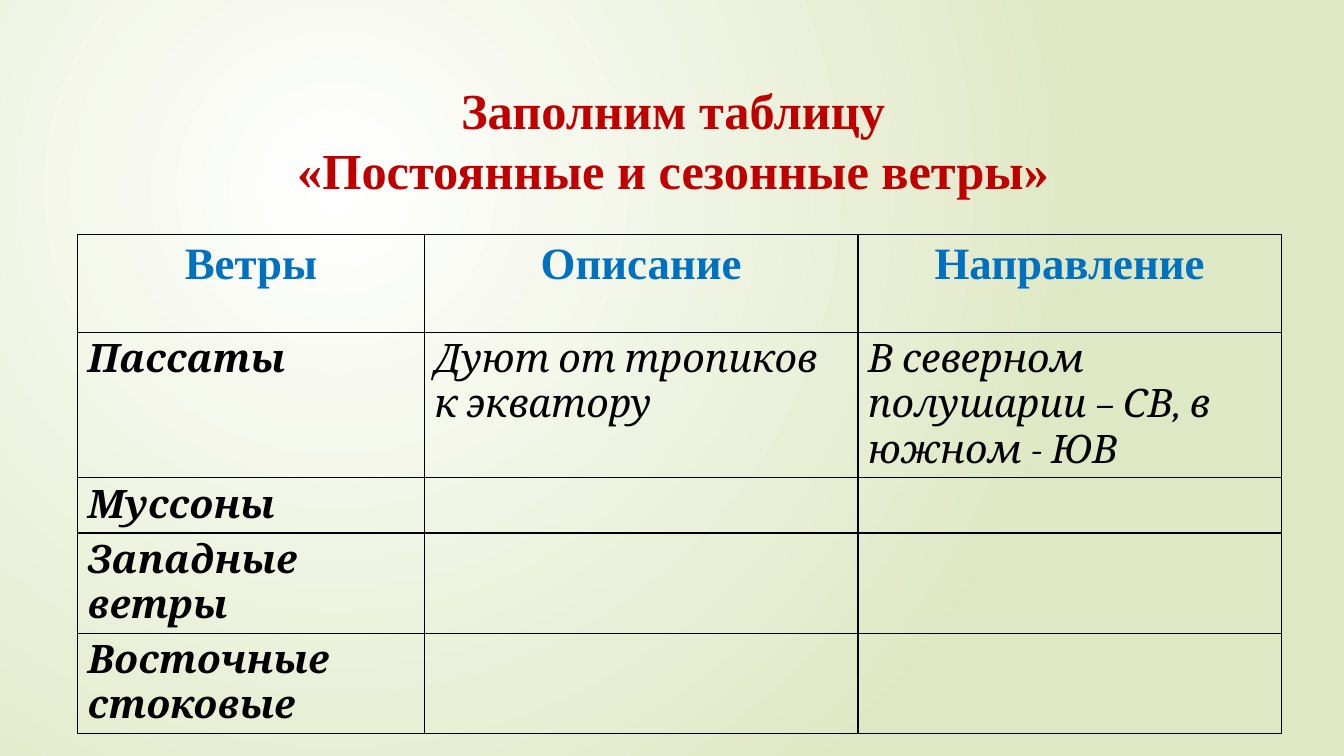
from dataclasses import dataclass

from lxml.etree import SubElement
from pptx import Presentation
from pptx.dml.color import RGBColor
from pptx.enum.text import MSO_ANCHOR, MSO_AUTO_SIZE, PP_ALIGN
from pptx.oxml.ns import qn
from pptx.slide import Slide
from pptx.table import _Cell as Cell
from pptx.text.text import _Paragraph as Paragraph
from pptx.util import Inches, Pt


@dataclass(frozen=True)
class TextStyle:
    font: str
    size: int
    color: str
    bold: bool = False
    italic: bool = False
    align: PP_ALIGN = PP_ALIGN.LEFT


@dataclass(frozen=True)
class Theme:
    title: TextStyle = TextStyle("Times New Roman", 36, "C00000", bold=True, align=PP_ALIGN.CENTER)
    header: TextStyle = TextStyle("Times New Roman", 32, "0070C0", bold=True, align=PP_ALIGN.CENTER)
    wind: TextStyle = TextStyle("Cambria", 28, "000000", bold=True, italic=True)
    detail: TextStyle = TextStyle("Cambria", 28, "000000", italic=True)
    glow: str = "FFFFFF"
    backdrop: str = "DFE8C4"
    border: str = "000000"
    border_width: int = 1


@dataclass(frozen=True)
class WindRow:
    wind: str
    description: str = ""
    direction: str = ""


THEME = Theme()
TITLE_LINES = ("Заполним таблицу ", "«Постоянные и сезонные ветры» ")
HEADER = WindRow("Ветры", "Описание", "Направление")
WINDS = (
    WindRow("Пассаты", "Дуют от тропиков к экватору", "В северном полушарии – СВ, в южном - ЮВ"),
    WindRow("Муссоны"),
    WindRow("Западные ветры"),
    WindRow("Восточные стоковые"),
)
COLUMN_WIDTHS = (3.44, 4.3, 4.2)
HEADER_HEIGHT, ROW_HEIGHT = 0.97, 0.41


def add_run(paragraph: Paragraph, text: str, style: TextStyle) -> None:
    """Append a styled run and align its paragraph."""
    paragraph.alignment = style.align
    run = paragraph.add_run()
    run.text = text
    font = run.font
    font.name, font.size = style.font, Pt(style.size)
    font.bold, font.italic = style.bold, style.italic
    font.color.rgb = RGBColor.from_string(style.color)


def paint_background(slide: Slide) -> None:
    """Fill the background with a circular gradient."""
    fill = slide.background.fill
    fill.gradient()
    for stop, color in zip(fill.gradient_stops, (THEME.glow, THEME.backdrop)):
        stop.color.rgb = RGBColor.from_string(color)
    gradient = slide.element.find(".//" + qn("a:gradFill"))
    gradient.remove(gradient.find(qn("a:lin")))
    circle = SubElement(gradient, qn("a:path"), {"path": "circle"})
    SubElement(circle, qn("a:fillToRect"), {"l": "50000", "t": "50000", "r": "100000", "b": "100000"})


def write_title(slide: Slide) -> None:
    """Place the two-line title."""
    title = slide.shapes.title
    title.left, title.top = Inches(0.89), Inches(0.68)
    title.width, title.height = Inches(11.7), Inches(0.8)
    frame = title.text_frame
    frame.word_wrap, frame.auto_size = True, MSO_AUTO_SIZE.NONE
    frame.vertical_anchor, frame.margin_top = MSO_ANCHOR.TOP, Inches(0.1)
    paragraph = frame.paragraphs[0]
    for index, line in enumerate(TITLE_LINES):
        if index:
            paragraph.add_line_break()
        add_run(paragraph, line, THEME.title)


def format_cell(cell: Cell, text: str, style: TextStyle) -> None:
    """Give a cell its borders, clear fill and text."""
    properties = cell._tc.get_or_add_tcPr()
    for side in ("a:lnL", "a:lnR", "a:lnT", "a:lnB"):
        line = SubElement(properties, qn(side), {"w": str(Pt(THEME.border_width))})
        solid = SubElement(line, qn("a:solidFill"))
        SubElement(solid, qn("a:srgbClr"), {"val": THEME.border})
    cell.fill.background()
    if text:
        add_run(cell.text_frame.paragraphs[0], text, style)


def add_wind_table(slide: Slide) -> None:
    """Draw the table of winds."""
    rows = (HEADER, *WINDS)
    frame = slide.shapes.add_table(
        len(rows), len(COLUMN_WIDTHS), Inches(0.77), Inches(2.33), Inches(11.93), Inches(4.17)
    )
    table = frame.table
    table.first_row = table.horz_banding = False
    for column, width in zip(table.columns, COLUMN_WIDTHS):
        column.width = Inches(width)
    for index, row in enumerate(rows):
        is_header = row is HEADER
        table.rows[index].height = Inches(HEADER_HEIGHT if is_header else ROW_HEIGHT)
        styles = (THEME.header,) * 3 if is_header else (THEME.wind, THEME.detail, THEME.detail)
        texts = (row.wind, row.description, row.direction)
        for cell, text, style in zip(table.rows[index].cells, texts, styles):
            format_cell(cell, text, style)
    frame.height = Inches(4.17)


def main() -> None:
    """Build and save the presentation."""
    presentation = Presentation()
    presentation.slide_width, presentation.slide_height = Inches(13.33), Inches(7.5)
    slide = presentation.slides.add_slide(presentation.slide_layouts.get_by_name("Title Only"))
    paint_background(slide)
    write_title(slide)
    add_wind_table(slide)
    presentation.save("out.pptx")


if __name__ == "__main__":
    main()
